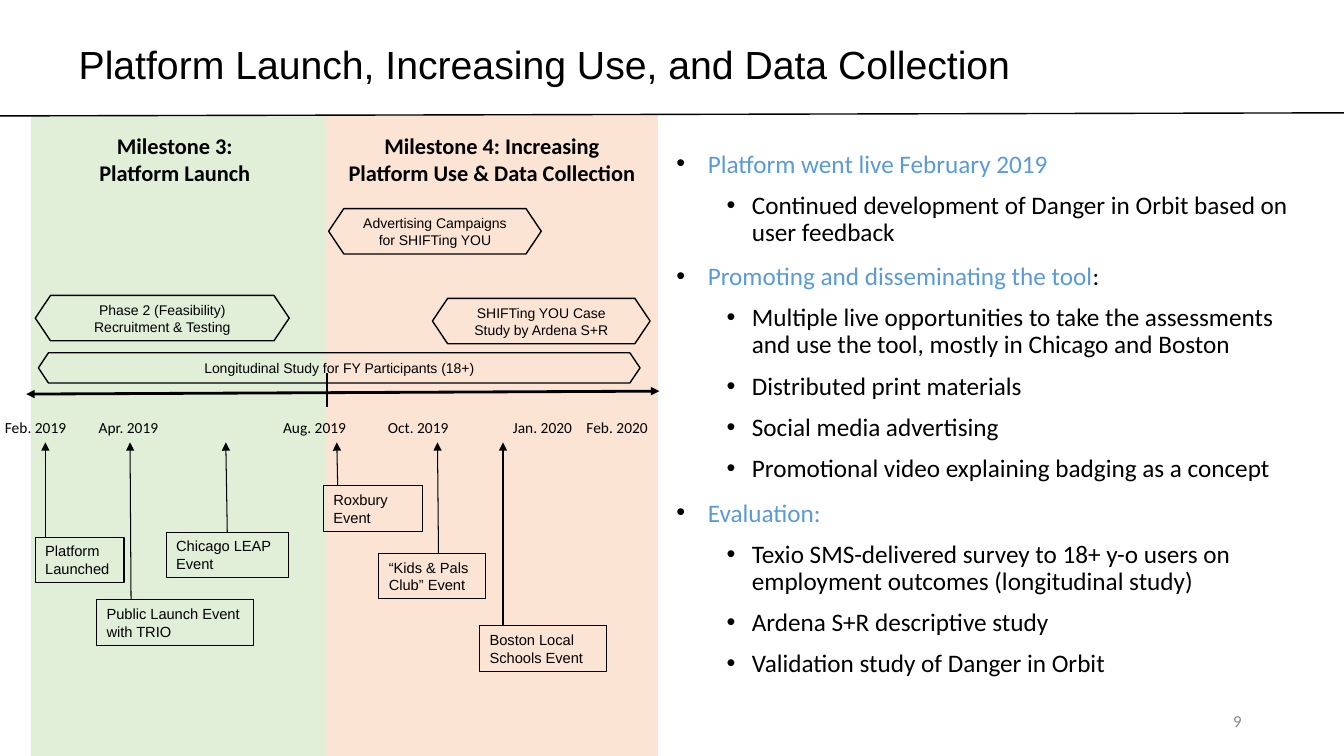
from pptx import Presentation
from pptx.dml.color import RGBColor
from pptx.enum import shapes, text
from pptx.oxml import ns, xmlchemy
from pptx.util import Pt

HUES = {
    "ink": "000000", "green": "E1EFD8", "peach": "FBE4D4",
    "blue": "5B9BD5", "gray": "888888",
}
KIND = shapes.MSO_SHAPE
LEFT, MID, RIGHT = text.PP_ALIGN.LEFT, text.PP_ALIGN.CENTER, text.PP_ALIGN.RIGHT
TOP, CORE = text.MSO_ANCHOR.TOP, text.MSO_ANCHOR.MIDDLE

MARKS = [
    (3.6, "Feb. 2019"), (70.6, "Apr. 2019"), (202.3, "Aug. 2019"),
    (277.2, "Oct. 2019"), (366.5, "Jan. 2020"), (419, "Feb. 2020"),
]
SPANS = [
    ("Phase 2 (Feasibility)\nRecruitment & Testing", 3.2, 129, 181.4, 32.4),
    ("Advertising Campaigns for SHIFTing YOU", 212.7, 67, 151.9, 32.4),
    ("SHIFTing YOU Case Study by Ardena S+R", 286.9, 131.1, 155.5, 32.4),
    ("Longitudinal Study for FY Participants (18+)", 5.4, 170, 429.8, 21.6),
]
EVENTS = [
    ("Platform Launched", 3.2, 301.8, 63.4, 10.4, 10.4),
    ("Public Launch Event with TRIO", 47.1, 346.4, 112.3, 71.6, 70.9),
    ("Chicago LEAP Event", 96.8, 298.2, 87.1, None, 139.3),
    ("Roxbury Event", 209.1, 265, 70.6, 219.2, 218.6),
    ("“Kids & Pals Club” Event", 248.7, 313.3, 76.3, 291.2, 290.5),
    ("Boston Local Schools Event", 320.7, 365.1, 90.7, 337.3, 337.3),
]
NOTES = [
    ("Platform went live February 2019", "", [
        "Continued development of Danger in Orbit based on user feedback"]),
    ("Promoting and disseminating the tool", ":", [
        "Multiple live opportunities to take the assessments and use the tool, "
        "mostly in Chicago and Boston",
        "Distributed print materials",
        "Social media advertising",
        "Promotional video explaining badging as a concept"]),
    ("Evaluation:", "", [
        "Texio SMS-delivered survey to 18+ y-o users on employment outcomes "
        "(longitudinal study)",
        "Ardena S+R descriptive study",
        "Validation study of Danger in Orbit"]),
]


def tint(name):
    return RGBColor.from_string(HUES[name])


def style(run, size, font="Calibri", hue="ink", bold=False):
    run.font.size, run.font.name, run.font.bold = Pt(size), font, bold
    run.font.color.rgb = tint(hue)


def write(frame, words, align=LEFT, anchor=TOP, **form):
    frame.word_wrap = True
    frame.auto_size = text.MSO_AUTO_SIZE.NONE
    frame.vertical_anchor = anchor
    frame.margin_left = frame.margin_right = Pt(7.2)
    frame.margin_top = frame.margin_bottom = Pt(3.6)
    for i, line in enumerate(words.split("\n")):
        para = frame.paragraphs[0] if i == 0 else frame.add_paragraph()
        para.alignment = align
        run = para.add_run()
        run.text = line
        style(run, **form)


def label(slide, words, x, y, w, h, **form):
    box = slide.shapes.add_textbox(Pt(x), Pt(y), Pt(w), Pt(h))
    write(box.text_frame, words, **form)


def block(slide, kind, x, y, w, h, fill=None, line=None):
    shape = slide.shapes.add_shape(kind, Pt(x), Pt(y), Pt(w), Pt(h))
    shape.shadow.inherit = False
    if fill:
        shape.fill.solid()
        shape.fill.fore_color.rgb = tint(fill)
    else:
        shape.fill.background()
    if line:
        shape.line.color.rgb = tint("ink")
        shape.line.width = Pt(line)
    else:
        shape.line.fill.background()
    return shape


def child(parent, tag, **attrs):
    node = xmlchemy.OxmlElement(tag)
    for key, value in attrs.items():
        node.set(key, value)
    parent.append(node)
    return node


def rule(slide, x1, y1, x2, y2, width, ends=()):
    line = slide.shapes.add_connector(
        shapes.MSO_CONNECTOR.STRAIGHT, Pt(x1), Pt(y1), Pt(x2), Pt(y2))
    line.line.color.rgb = tint("ink")
    line.line.width = Pt(width)
    props = line.element.find(ns.qn("p:spPr"))
    for end in ends:
        child(props.find(ns.qn("a:ln")), end, type="triangle")
    child(props, "a:effectLst")
    return line


def header(slide, x, y, w, h):
    title = slide.shapes.title
    title.left, title.top = Pt(x + 49), Pt(y + 25.2)
    title.width, title.height = Pt(w - 87.4), Pt(41)
    write(title.text_frame, "Platform Launch, Increasing Use, and Data Collection",
          size=28, font="Arial")
    rule(slide, x, y + h, x + w, y + h - 2.2, 1)


def panels(slide, x, y, w, h):
    block(slide, KIND.RECTANGLE, x + 209, y, w - 209, h, fill="peach")
    block(slide, KIND.RECTANGLE, x, y, 211, h, fill="green")
    rule(slide, x - 3.3, y + 199.5, x + w + 1, y + 197.4, 2,
         ("a:headEnd", "a:tailEnd"))
    rule(slide, x + 211.3, y + 184.4, x + 211.3, y + 208.9, 1.5)
    head = dict(size=16, bold=True, align=MID)
    label(slide, "Milestone 3:\nPlatform Launch", x + 3.2, y + 8.7, 199.4, 53.3, **head)
    label(slide, "Milestone 4: Increasing Platform Use & Data Collection",
          x + 216, y + 8.7, 226.8, 53.3, **head)


def spans(slide, x, y):
    for words, dx, dy, w, h in SPANS:
        arrow = block(slide, KIND.LEFT_RIGHT_ARROW, x + dx, y + dy, w, h, line=1)
        arrow.adjustments[0], arrow.adjustments[1] = 1, 0.336
        write(arrow.text_frame, words, size=10, font="Arial", align=MID, anchor=CORE)


def events(slide, x, y):
    for dx, words in MARKS:
        label(slide, words, x + dx - 29.2, y + 213.2, 72.7, 20.9, size=11)
    for words, dx, dy, w, start, tip in EVENTS:
        box = block(slide, KIND.RECTANGLE, x + dx, y + dy, w, 32.4, line=0.75)
        write(box.text_frame, words, size=10.5, font="Arial")
        foot = dx + w / 2 if start is None else start
        line = rule(slide, x + foot, y + dy, x + tip, y + 234, 0.75, ("a:tailEnd",))
        if start is None:
            line.begin_connect(box, 0)


def bullet(para, level, left, hang):
    para.level = level
    para.space_before = Pt(10)
    if level:
        para.line_spacing = 0.9
    props = para._p.get_or_add_pPr()
    props.set("marL", str(Pt(left)))
    props.set("indent", str(-Pt(hang)))
    child(child(props, "a:buClr"), "a:srgbClr", val=HUES["ink"])
    child(props, "a:buFont", typeface="Arial")
    child(props, "a:buChar", char="•")


def notes(slide, x, y, w, h):
    frame = slide.shapes.add_textbox(Pt(x), Pt(y), Pt(w), Pt(h)).text_frame
    frame.word_wrap = True
    rows = []
    for head, end, items in NOTES:
        rows.append((0, [(head, "blue"), (end, "ink")]))
        rows += [(1, [(item, "ink")]) for item in items]
    for i, (level, parts) in enumerate(rows):
        para = frame.paragraphs[0] if i == 0 else frame.add_paragraph()
        bullet(para, level, *((54, 18) if level else (22.5, 22.5)))
        for words, hue in parts:
            if words:
                run = para.add_run()
                run.text = words
                style(run, 18, hue=hue)


def main():
    deck = Presentation()
    deck.slide_width, deck.slide_height = Pt(960), Pt(540)
    slide = deck.slides.add_slide(deck.slide_layouts[5])
    panels(slide, 22, 82, 448, 458)
    header(slide, 0, 0, 960, 82.8)
    spans(slide, 22, 82)
    events(slide, 22, 82)
    notes(slide, 476, 102.2, 466, 424)
    label(slide, "9", 678, 500.4, 216, 28.8, size=12, hue="gray",
          align=RIGHT, anchor=CORE)
    deck.save("out.pptx")


if __name__ == "__main__":
    main()
